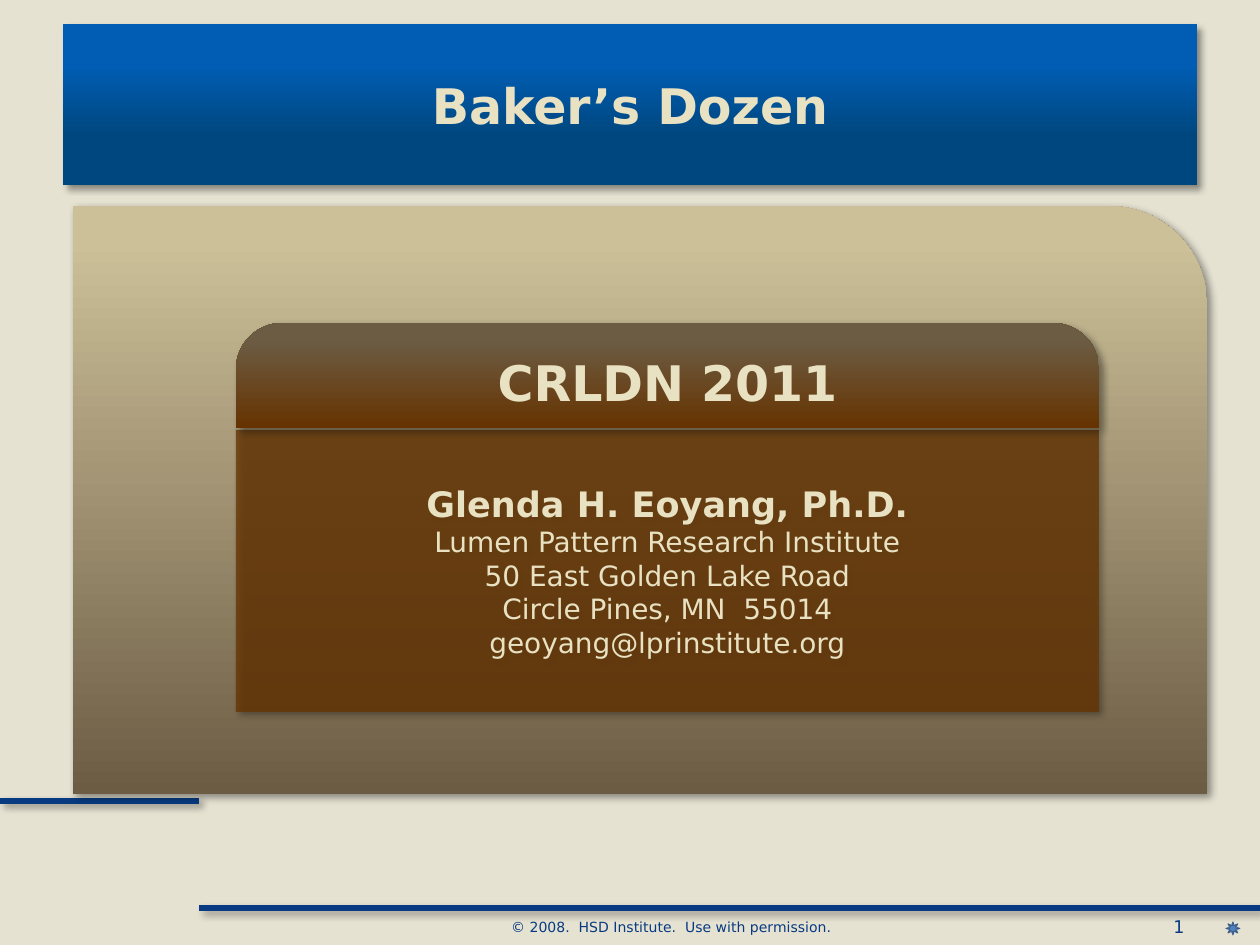
from lxml.etree import SubElement
from pptx import Presentation
from pptx.dml.color import RGBColor
from pptx.enum.shapes import MSO_CONNECTOR, MSO_SHAPE
from pptx.enum.text import MSO_ANCHOR, MSO_AUTO_SIZE, PP_ALIGN
from pptx.oxml import parse_xml
from pptx.oxml.ns import nsdecls, qn
from pptx.util import Pt

PX = 914400 // 126
NAVY, CREAM, BROWN, TAUPE = "083A81", "E8E1C2", "663300", "6C5C44"


def color(hex_string):
    return RGBColor.from_string(hex_string)


def add_shadow(item):
    """Put the soft lower-right shadow last in the item's properties."""
    item._element.spPr.append(parse_xml(
        f'<a:effectLst {nsdecls("a")}><a:outerShdw blurRad="{Pt(4)}" dist="{Pt(3)}"'
        ' dir="2700000" algn="tl" rotWithShape="0"><a:srgbClr val="000000">'
        '<a:alpha val="40000"/></a:srgbClr></a:outerShdw></a:effectLst>'))


deck = Presentation()
deck.slide_width, deck.slide_height = 1260 * PX, 945 * PX
page = deck.slides.add_slide(deck.slide_layouts[5])
page.background.fill.solid()
page.background.fill.fore_color.rgb = color("E5E2D2")

# Blue rules
for left, right, y in [(0, 199, 801), (199, 1260, 908)]:
    rule = page.shapes.add_connector(
        MSO_CONNECTOR.STRAIGHT, left * PX, y * PX, right * PX, y * PX)
    rule.line.color.rgb = color(NAVY)
    rule.line.width = Pt(3)
    add_shadow(rule)

# Footer texts
number = page.shapes.add_textbox(903 * PX, 910 * PX, 294 * PX, 34 * PX)
copyright_line = page.shapes.add_textbox(199 * PX, 912 * PX, 945 * PX, 30 * PX)

# Title and panels, back to front
title = page.shapes.title
title.left, title.top, title.width, title.height = 63 * PX, 24 * PX, 1134 * PX, 161 * PX
backdrop = page.shapes.add_shape(
    MSO_SHAPE.ROUND_1_RECTANGLE, 73 * PX, 206 * PX, 1134 * PX, 588 * PX)
contact = page.shapes.add_shape(
    MSO_SHAPE.RECTANGLE, 236 * PX, 430 * PX, 863 * PX, 282 * PX)
event = page.shapes.add_shape(
    MSO_SHAPE.ROUND_2_SAME_RECTANGLE, 236 * PX, 323 * PX, 863 * PX, 105 * PX)
event.adjustments[0] = 0.44

for panel, stops in [
    (title, [(0.31, "00477F"), (0.74, "005DB3")]),
    (backdrop, [(0, TAUPE), (0.94, "CCC099")]),
    (event, [(0, BROWN), (0.84, TAUPE)]),
]:
    panel.fill.gradient()
    panel.fill.gradient_angle = 90
    for stop, (position, shade) in zip(panel.fill.gradient_stops, stops):
        stop.position = position
        stop.color.rgb = color(shade)

contact.fill.solid()
contact.fill.fore_color.rgb = color(BROWN)
brown_fill = contact._element.spPr.find(qn("a:solidFill")).find(qn("a:srgbClr"))
SubElement(brown_fill, qn("a:alpha"), val="76000")

for panel in (title, backdrop, contact, event):
    panel.line.fill.background()
    add_shadow(panel)

# Wording: box, alignment, anchor, colour, lines of (text, size, bold)
wording = [
    (number, PP_ALIGN.RIGHT, MSO_ANCHOR.TOP, NAVY, [("1", 10, False)]),
    (copyright_line, PP_ALIGN.CENTER, MSO_ANCHOR.TOP, NAVY,
     [("© 2008.  HSD Institute.  Use with permission.", 8, False)]),
    (title, PP_ALIGN.CENTER, MSO_ANCHOR.MIDDLE, CREAM, [("Baker’s Dozen", 28, True)]),
    (event, PP_ALIGN.CENTER, MSO_ANCHOR.MIDDLE, CREAM, [("CRLDN 2011", 28, True)]),
    (contact, PP_ALIGN.CENTER, MSO_ANCHOR.MIDDLE, CREAM, [
        ("Glenda H. Eoyang, Ph.D.", 20, True),
        ("Lumen Pattern Research Institute", 16, False),
        ("50 East Golden Lake Road", 16, False),
        ("Circle Pines, MN  55014", 16, False),
        ("geoyang@lprinstitute.org", 16, False),
    ]),
]
for box, alignment, anchor, text_color, lines in wording:
    frame = box.text_frame
    frame.word_wrap = True
    frame.auto_size = MSO_AUTO_SIZE.NONE
    frame.vertical_anchor = anchor
    for index, (text, size, bold) in enumerate(lines):
        para = frame.add_paragraph() if index else frame.paragraphs[0]
        para.alignment = alignment
        span = para.add_run()
        span.text = text
        span.font.name = "DejaVu Sans"
        span.font.size = Pt(size)
        span.font.bold = bold
        span.font.color.rgb = color(text_color)

# Corner ornament
sun = page.shapes.add_shape(MSO_SHAPE.SUN, 1226 * PX, 922 * PX, 14 * PX, 13 * PX)
sun.shadow.inherit = False
sun.fill.solid()
sun.fill.fore_color.rgb = color("4F81BD")
sun.line.color.rgb = color("3A5F8C")
sun.line.width = Pt(0.5)

deck.save("out.pptx")
